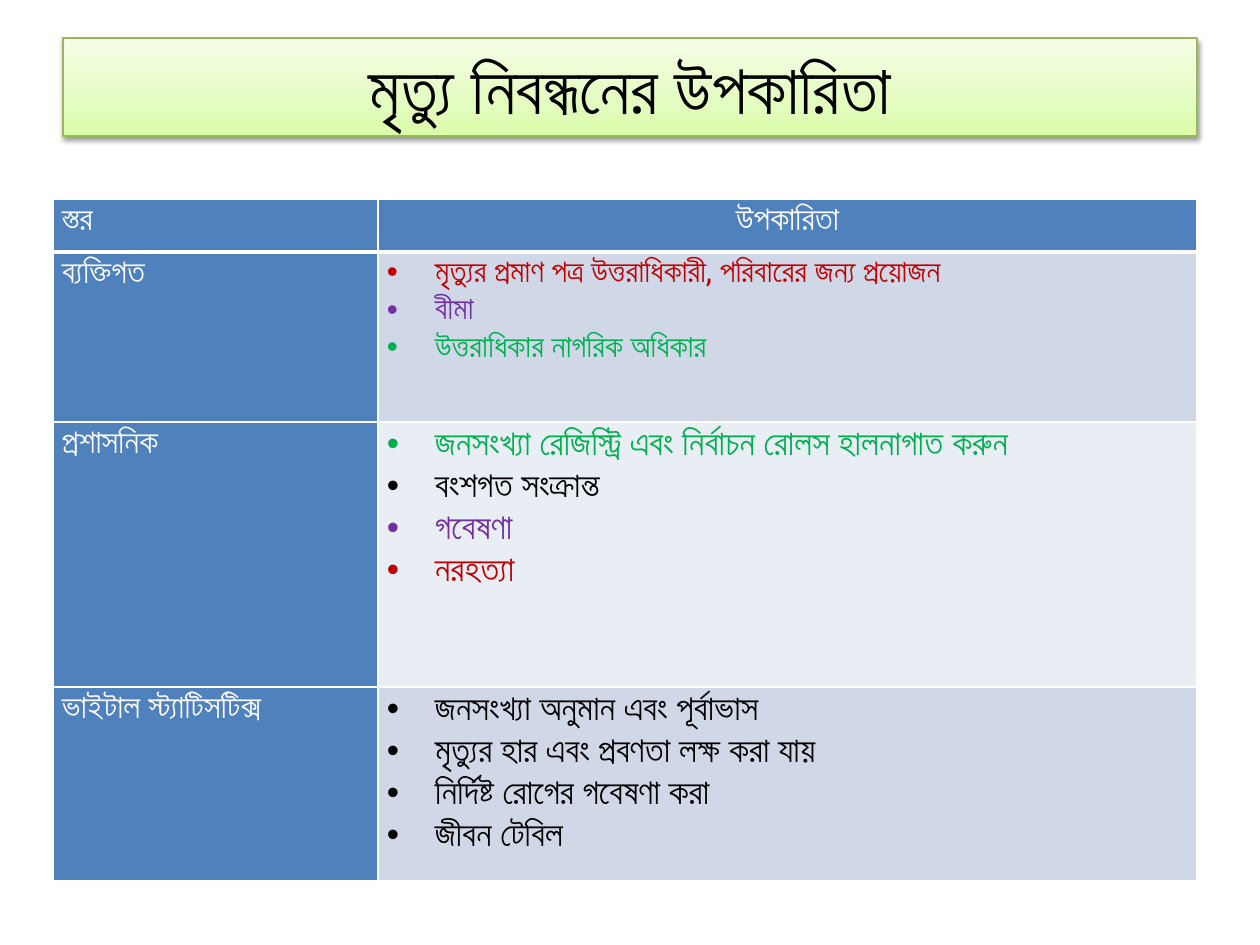
from pptx import Presentation
from pptx.dml.color import RGBColor
from pptx.enum.text import MSO_ANCHOR, PP_ALIGN
from pptx.oxml import parse_xml
from pptx.oxml.ns import nsdecls
from pptx.util import Pt

SCALE = 914400 / 126
FONT = "Roboto"
WHITE = RGBColor(0xFF, 0xFF, 0xFF)
BLACK = RGBColor(0x00, 0x00, 0x00)
BLUE = RGBColor(0x4F, 0x81, 0xBD)
DARK = RGBColor(0xD0, 0xD8, 0xE8)
PALE = RGBColor(0xE9, 0xED, 0xF4)
RED = RGBColor(0xC0, 0x00, 0x00)
PLUM = RGBColor(0x70, 0x30, 0xA0)
GREEN = RGBColor(0x00, 0xB0, 0x50)
OLIVE = RGBColor(0x98, 0xB9, 0x55)
STOPS = [
    (0, RGBColor(0xDA, 0xFD, 0xA7)),
    (35, RGBColor(0xE4, 0xFC, 0xC2)),
    (100, RGBColor(0xF5, 0xFF, 0xE7)),
]

TITLE = "মৃত্যু নিবন্ধনের উপকারিতা"
HEADS = ["স্তর", "উপকারিতা"]
LEVELS = [
    ("ব্যক্তিগত", 18, False, [
        ("মৃত্যুর প্রমাণ পত্র উত্তরাধিকারী, পরিবারের জন্য প্রয়োজন", RED),
        ("বীমা", PLUM),
        ("উত্তরাধিকার নাগরিক অধিকার", GREEN),
    ]),
    ("প্রশাসনিক", 20, True, [
        ("জনসংখ্যা রেজিস্ট্রি এবং নির্বাচন রোলস হালনাগাত করুন", GREEN),
        ("বংশগত সংক্রান্ত", BLACK),
        ("গবেষণা", PLUM),
        ("নরহত্যা", RED),
    ]),
    ("ভাইটাল স্ট্যাটিসটিক্স", 20, False, [
        ("জনসংখ্যা অনুমান এবং পূর্বাভাস", BLACK),
        ("মৃত্যুর হার এবং প্রবণতা লক্ষ করা যায়", BLACK),
        ("নির্দিষ্ট রোগের গবেষণা করা", BLACK),
        ("জীবন টেবিল", BLACK),
    ]),
]
WIDTHS = [325, 819]
HEIGHTS = [53, 170, 265, 194]


def px(num):
    """Turn px into EMU."""
    return round(num * SCALE)


def style(item, **vals):
    """Set attributes from format values."""
    for name, val in vals.items():
        setattr(item, name, val)


def node(tag, inner="", **attrs):
    """Make one drawing element."""
    text = " ".join(f'{key}="{val}"' for key, val in attrs.items())
    return parse_xml(f'<a:{tag} {nsdecls("a")} {text}>{inner}</a:{tag}>')


def write(para, text, size, color, bold):
    """Put one formatted run in a paragraph."""
    run = para.add_run()
    run.text = text
    style(run.font, name=FONT, size=Pt(size), bold=bold)
    run.font.color.rgb = color
    run.font._element.append(node("cs", typeface=FONT))


def add_title(slide):
    """Fill and place the title band."""
    band = slide.shapes.title
    style(band, left=px(63), top=px(38), width=px(1134), height=px(98))
    stops = "".join(
        f'<a:gs pos="{pos * 1000}"><a:srgbClr val="{color}"/></a:gs>'
        for pos, color in STOPS
    )
    props = band._element.spPr
    props.append(node("prstGeom", "<a:avLst/>", prst="rect"))
    props.append(node(
        "gradFill", f'<a:gsLst>{stops}</a:gsLst><a:lin ang="16200000" scaled="0"/>'
    ))
    band.line.color.rgb = OLIVE
    band.line.width = Pt(0.75)
    props.append(node(
        "effectLst",
        '<a:outerShdw blurRad="40000" dist="20000" dir="5400000" rotWithShape="0">'
        '<a:srgbClr val="000000"><a:alpha val="38000"/></a:srgbClr></a:outerShdw>',
    ))
    frame = band.text_frame
    style(frame, vertical_anchor=MSO_ANCHOR.MIDDLE, word_wrap=True)
    para = frame.paragraphs[0]
    para.alignment = PP_ALIGN.CENTER
    write(para, TITLE, 39.6, BLACK, True)


def fill_cell(cell, lines, size, bold, back, align=PP_ALIGN.LEFT, dots=False, base=1):
    """Give a cell its borders, fill and lines of text."""
    props = cell._tc.get_or_add_tcPr()
    for side, width in zip("LRTB", (1, 1, 1, base)):
        paint = f'<a:solidFill><a:srgbClr val="{WHITE}"/></a:solidFill>'
        props.append(node(f"ln{side}", paint, w=Pt(width)))
    cell.fill.solid()
    cell.fill.fore_color.rgb = back
    style(cell, margin_left=px(9), margin_right=px(9), margin_top=0, margin_bottom=0)
    frame = cell.text_frame
    for num, (text, color) in enumerate(lines):
        para = frame.add_paragraph() if num else frame.paragraphs[0]
        style(para, alignment=align, line_spacing=Pt(size * 1.2))
        if dots:
            props = para._p.get_or_add_pPr()
            props.set("marL", str(px(48)))
            props.set("indent", str(px(-48)))
            props.append(node("buFont", typeface="Arial"))
            props.append(node("buChar", char="•"))
        write(para, text, size, color, bold)


def add_grid(slide):
    """Build the table of levels and benefits."""
    grid = slide.shapes.add_table(
        len(HEIGHTS), len(WIDTHS), px(53), px(199), px(sum(WIDTHS)), px(sum(HEIGHTS))
    ).table
    grid.first_col = True
    for col, width in zip(grid.columns, WIDTHS):
        col.width = px(width)
    for row, height in zip(grid.rows, HEIGHTS):
        row.height = px(height)
    for col, align in enumerate((PP_ALIGN.LEFT, PP_ALIGN.CENTER)):
        fill_cell(grid.cell(0, col), [(HEADS[col], WHITE)], 19, True, BLUE, align, base=3)
    for row, (level, size, bold, lines) in enumerate(LEVELS, 1):
        fill_cell(grid.cell(row, 0), [(level, WHITE)], 19, True, BLUE)
        back = DARK if row % 2 else PALE
        fill_cell(grid.cell(row, 1), lines, size, bold, back, dots=True)


def main():
    """Build and save the slide."""
    deck = Presentation()
    style(deck, slide_width=px(1260), slide_height=px(945))
    slide = deck.slides.add_slide(deck.slide_layouts[5])
    add_title(slide)
    add_grid(slide)
    deck.save("out.pptx")


if __name__ == "__main__":
    main()
